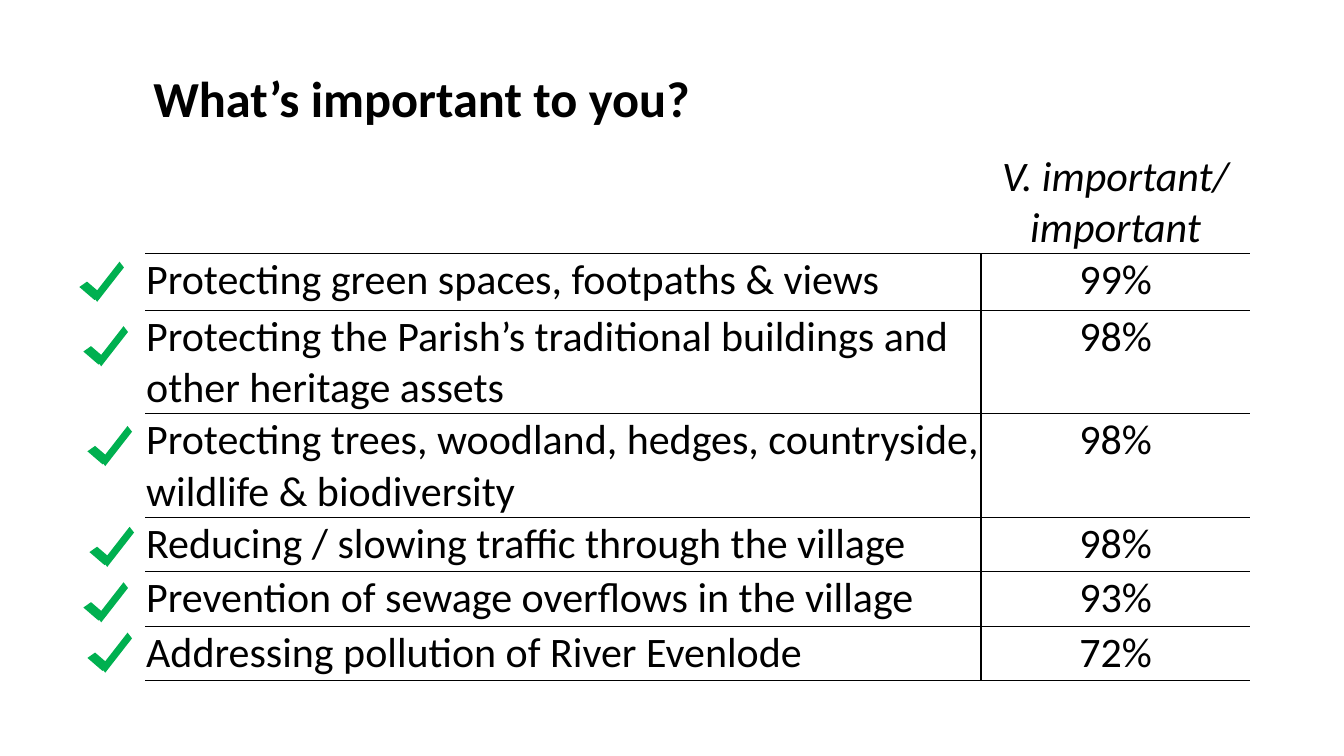
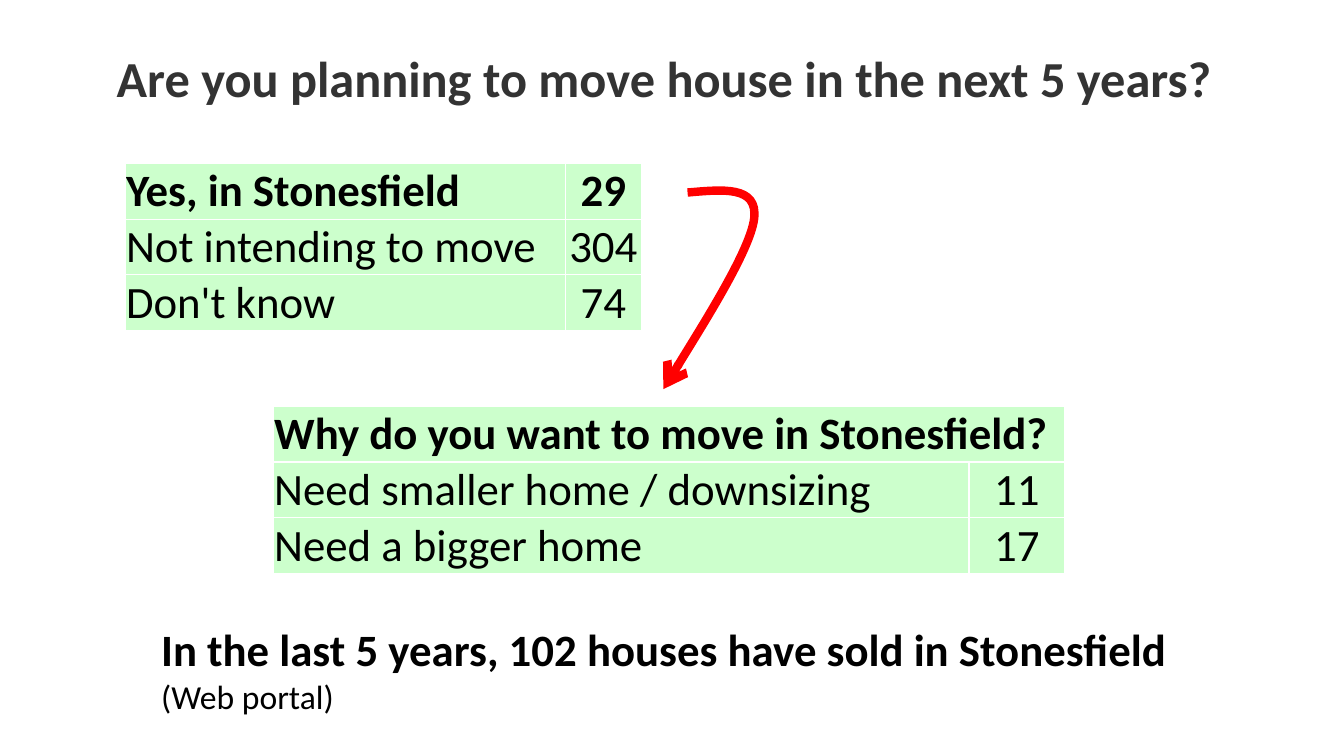
from lxml.etree import SubElement
from pptx import Presentation
from pptx.dml.color import RGBColor as RGB
from pptx.enum.shapes import MSO_SHAPE as Kind
from pptx.enum.text import MSO_ANCHOR as Anchor, MSO_AUTO_SIZE as Auto, PP_ALIGN as Align
from pptx.oxml.ns import qn
from pptx.util import Pt

SCALE = 9144  # EMU in one px, 100 px to the inch
HUES = {
    "ink": "000000", "head": "333333", "tick": "00B050",
    "mint": "CCFFCC", "white": "FFFFFF", "red": "FF0000",
}


def px(*vals):
    return [val * SCALE for val in vals]


def hue(name):
    return RGB.from_string(HUES[name])


class Deck:
    face = "Calibri"

    def __init__(self, wide, high):
        self.file = Presentation()
        self.file.slide_width, self.file.slide_height = px(wide, high)
        self.slide = None

    def font(self, para, size=None, color="ink", bold=False, italic=False, align=Align.LEFT):
        para.alignment = align
        font = para.font
        font.name, font.bold, font.italic = self.face, bold, italic
        font.color.rgb = hue(color)
        if size:
            font.size = Pt(size)

    def page(self, text, box, color="ink", align=Align.LEFT):
        """Start a slide and set its title."""
        self.slide = self.file.slides.add_slide(self.file.slide_layouts[5])
        title = self.slide.shapes.title
        title.left, title.top, title.width, title.height = px(*box)
        frame = title.text_frame
        frame.text = text
        frame.auto_size = Auto.NONE
        frame.vertical_anchor = Anchor.TOP
        self.font(frame.paragraphs[0], 36, color, True, align=align)

    def note(self, box, runs):
        """Add one paragraph of (text, size, bold) runs."""
        frame = self.slide.shapes.add_textbox(*px(*box)).text_frame
        frame.word_wrap = True
        para = frame.paragraphs[0]
        self.font(para)
        for text, size, bold in runs:
            run = para.add_run()
            run.text = text
            run.font.size, run.font.bold = Pt(size), bold

    def edge(self, cell, side, color):
        """Draw one side (L, R, T or B) of a cell, or clear it when color is None."""
        line = SubElement(cell._tc.get_or_add_tcPr(), qn(f"a:ln{side}"), w=str(Pt(1)))
        if color:
            fill = SubElement(line, qn("a:solidFill"))
            SubElement(fill, qn("a:srgbClr"), val=HUES[color])
        else:
            SubElement(line, qn("a:noFill"))

    def table(self, left, top, cols, highs, rows, size, edges, fill=None,
              anchor=Anchor.TOP, **first):
        """Add a table; edges(row, col) gives its L, R, T, B colours, first styles row 0."""
        box = px(left, top, sum(cols), sum(highs))
        grid = self.slide.shapes.add_table(len(rows), len(cols), *box).table
        grid.first_row = grid.horz_banding = False
        for col, wide in zip(grid.columns, cols):
            col.width = wide * SCALE
        for r, (high, texts) in enumerate(zip(highs, rows)):
            grid.rows[r].height = high * SCALE
            if len(texts) < len(cols):
                grid.cell(r, 0).merge(grid.cell(r, len(cols) - 1))
            for c in range(len(cols)):
                cell = grid.cell(r, c)
                for side, color in zip("LRTB", edges(r, c)):
                    self.edge(cell, side, color)
                if fill:
                    cell.fill.solid()
                    cell.fill.fore_color.rgb = hue(fill)
                else:
                    cell.fill.background()
                cell.margin_left = cell.margin_right = cell.margin_top = SCALE
                cell.margin_bottom = 0
                cell.vertical_anchor = anchor
                if c < len(texts):
                    cell.text = texts[c]
                para = cell.text_frame.paragraphs[0]
                style = first if r == 0 else {}
                self.font(para, size, align=Align.CENTER if c else Align.LEFT, **style)

    def tick(self, left, top):
        """Add a tick mark: a short and a long slanted bar in a group."""
        group = self.slide.shapes.add_group_shape()
        bars = ((left, top, 22, 9), 40.7), ((left + 6, top - 8, 45, 7), 307.9)
        for box, turn in bars:
            bar = group.shapes.add_shape(Kind.PARALLELOGRAM, *px(*box))
            bar.rotation = turn
            bar.shadow.inherit = False
            bar.fill.solid()
            bar.fill.fore_color.rgb = hue("tick")
            bar.line.fill.background()

    def arrow(self, start, *points, color="red", weight=6):
        """Add a Bézier arrow; every three points make one curve."""
        pen = self.slide.shapes.build_freeform(*start, scale=SCALE)
        pen.add_line_segments(points, close=False)
        shape = pen.convert_to_shape()
        shape.shadow.inherit = False
        shape.fill.background()
        shape.line.color.rgb = hue(color)
        shape.line.width = Pt(weight)
        SubElement(shape.line._get_or_add_ln(), qn("a:tailEnd"), type="arrow")
        curve = next(shape._element.iter(qn("a:path")))
        steps = curve.findall(qn("a:lnTo"))
        for i in range(0, len(steps), 3):
            bend = SubElement(curve, qn("a:cubicBezTo"))
            for step in steps[i:i + 3]:
                bend.append(step[0])
                curve.remove(step)


def values(deck):
    deck.page("What’s important to you?", (142, 62, 729, 71))
    rows = [
        ("", "V. important/ important"),
        ("Protecting green spaces, footpaths & views", "99%"),
        ("Protecting the Parish’s traditional buildings and other heritage assets", "98%"),
        ("Protecting trees, woodland, hedges, countryside, wildlife & biodiversity", "98%"),
        ("Reducing / slowing traffic through the village", "98%"),
        ("Prevention of sewage overflows in the village", "93%"),
        ("Addressing pollution of River Evenlode", "72%"),
    ]

    def edges(r, c):
        rule = "ink" if r else None
        return (rule if c else None, None if c else rule, rule, "ink")

    deck.table(144, 149, (829, 267), (100, 56, 101, 101, 54, 54, 54), rows, 30,
               edges, italic=True)
    for spot in ((79, 284), (83, 348), (87, 447), (89, 547), (83, 602), (87, 652)):
        deck.tick(*spot)


def moves(deck):
    deck.page("Are you planning to move house in the next 5 years?",
              (70, 42, 1178, 71), "head", Align.CENTER)
    plans = [("Yes, in Stonesfield", "29"), ("Not intending to move", "304"),
             ("Don't know", "74")]
    why = [("Why do you want to move in Stonesfield?",),
           ("Need smaller home / downsizing", "11"), ("Need a bigger home", "17")]
    for left, top, cols, rows in ((124, 162, (437, 75), plans), (271, 403, (690, 95), why)):
        deck.table(left, top, cols, (54,) * 3, rows, 32, lambda r, c: ("white",) * 4,
                   "mint", Anchor.BOTTOM, bold=True)
    deck.note((150, 612, 1033, 104), (
        ("In the last 5 years, 102 houses have sold in Stonesfield ", 32, True),
        ("(Web portal)", 24, False)))
    deck.arrow((682, 191), (717, 188), (752, 184), (748, 217),
               (744, 249), (658, 386), (658, 386))


def main():
    deck = Deck(1333, 750)
    values(deck)
    moves(deck)
    deck.file.save("out.pptx")


if __name__ == "__main__":
    main()
